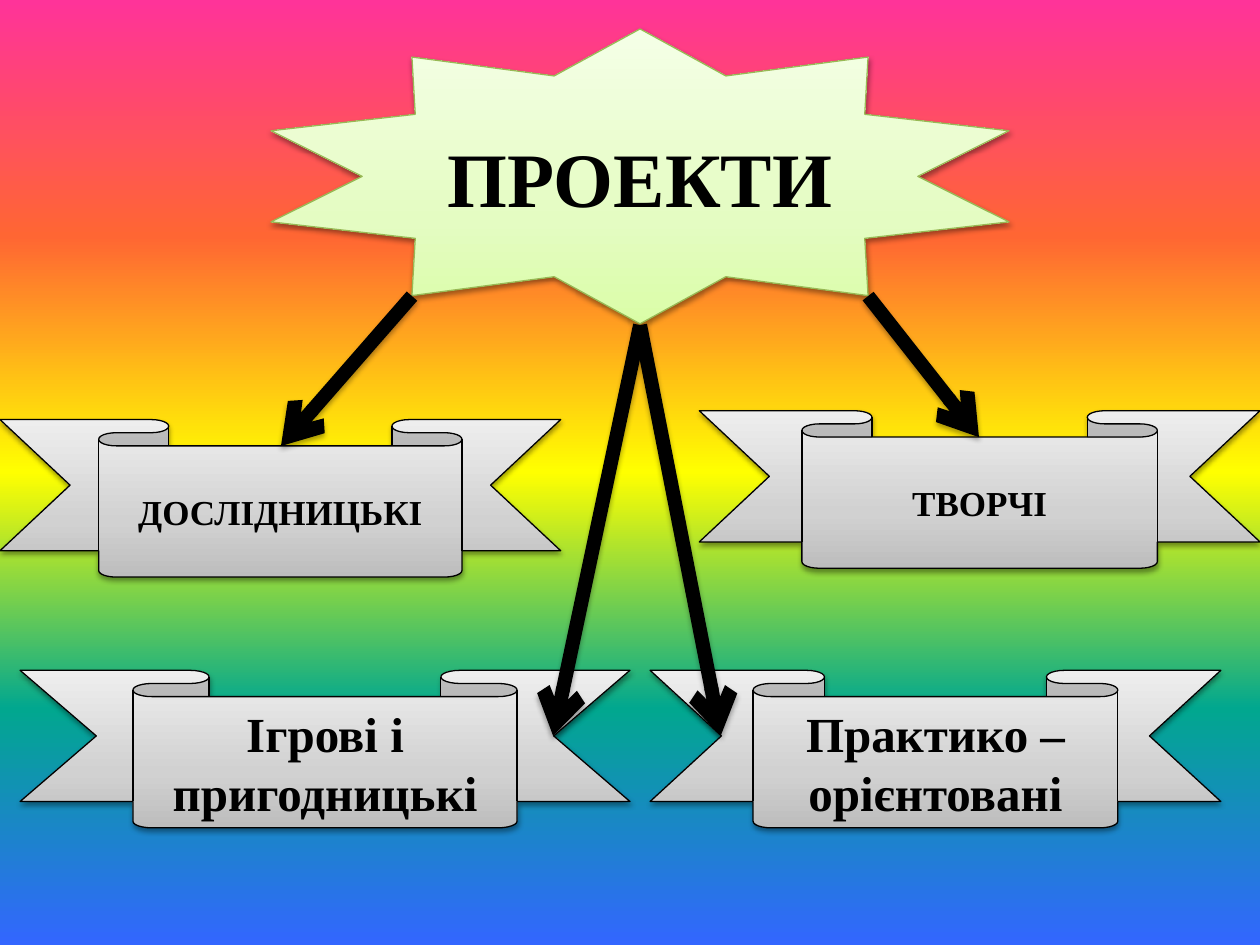
from dataclasses import dataclass

from lxml.etree import SubElement
from pptx import Presentation
from pptx.dml.color import RGBColor
from pptx.enum.shapes import MSO_CONNECTOR, MSO_SHAPE
from pptx.enum.text import MSO_ANCHOR, PP_ALIGN
from pptx.oxml.ns import qn
from pptx.util import Inches, Pt


@dataclass(frozen=True)
class Theme:
    font: str = "Times New Roman"
    ink: str = "000000"
    star_line: str = "98B955"
    rainbow: tuple = ((0, "FF3399"), (25, "FF6633"), (50, "FFFF00"),
                      (75, "01A78F"), (100, "3366FF"))
    star_fill: tuple = ((0, "DAFDA7"), (35, "E4FCC2"), (100, "F5FFE7"))
    ribbon_fill: tuple = ((0, "BDBDBD"), (35, "D1D1D1"), (100, "EEEEEE"))
    title_size: int = 44
    small_size: int = 20
    large_size: int = 28
    outline: float = 0.75
    arrow_width: int = 8


THEME = Theme()
RIBBON_HEIGHT = 1.25
RIBBON_FOLD = 0.167

# Ribbons: text, left, top, width, share of the width for the panel, text size
RIBBONS = (
    ("ДОСЛІДНИЦЬКІ", 0, 3.33, 4.45, 0.648, THEME.small_size),
    ("ТВОРЧІ", 5.55, 3.26, 4.45, 0.634, THEME.small_size),
    ("Ігрові і пригодницькі", 0.16, 5.32, 4.84, 0.63, THEME.large_size),
    ("Практико – орієнтовані", 5.16, 5.32, 4.53, 0.639, THEME.large_size),
)

# Arrows from the star's points to the ribbons
STAR_TIP = (5.08, 2.58)
ARROWS = (
    ((3.27, 2.35), (2.23, 3.54)),
    (STAR_TIP, (4.39, 5.84)),
    (STAR_TIP, (5.72, 5.84)),
    ((6.89, 2.35), (7.77, 3.47)),
)


def set_gradient(fill, element, stops, angle):
    """Fill with any number of stops; the angle runs counter-clockwise."""
    fill.gradient()
    fill.gradient_angle = angle
    stop_list = element.find(".//" + qn("a:gsLst"))
    for old_stop in list(stop_list):
        stop_list.remove(old_stop)
    for position, color in stops:
        stop = SubElement(stop_list, qn("a:gs"), pos=str(position * 1000))
        SubElement(stop, qn("a:srgbClr"), val=color)


def set_line(line, color, width):
    line.color.rgb = RGBColor.from_string(color)
    line.width = Pt(width)


def add_shadow(properties, distance, opacity):
    """Soft shadow that falls straight down."""
    effects = properties.find(qn("a:effectLst"))
    if effects is None:
        effects = SubElement(properties, qn("a:effectLst"))
    shadow = SubElement(effects, qn("a:outerShdw"), blurRad=str(Pt(3.1)),
                        dist=str(Pt(distance)), dir="5400000", rotWithShape="0")
    color = SubElement(shadow, qn("a:srgbClr"), val=THEME.ink)
    SubElement(color, qn("a:alpha"), val=str(opacity * 1000))


def add_label(shape, text, size):
    frame = shape.text_frame
    frame.word_wrap = True
    frame.vertical_anchor = MSO_ANCHOR.MIDDLE
    paragraph = frame.paragraphs[0]
    paragraph.alignment = PP_ALIGN.CENTER
    run = paragraph.add_run()
    run.text = text
    run.font.name = THEME.font
    run.font.size = Pt(size)
    run.font.bold = True
    run.font.color.rgb = RGBColor.from_string(THEME.ink)


def add_figure(slide, kind, box, adjustments, stops, line_color, text, size):
    shape = slide.shapes.add_shape(kind, *(Inches(value) for value in box))
    for index, value in enumerate(adjustments):
        shape.adjustments[index] = value
    set_gradient(shape.fill, shape.element.spPr, stops, 90)
    set_line(shape.line, line_color, THEME.outline)
    shape.shadow.inherit = False
    add_shadow(shape.element.spPr, 1.6, 38)
    add_label(shape, text, size)


def add_arrow(slide, start, end):
    connector = slide.shapes.add_connector(
        MSO_CONNECTOR.STRAIGHT, *(Inches(value) for value in start + end))
    set_line(connector.line, THEME.ink, THEME.arrow_width)
    properties = connector.element.spPr
    SubElement(properties.find(qn("a:ln")), qn("a:tailEnd"), type="arrow")
    add_shadow(properties, 1.8, 35)


def main():
    presentation = Presentation()
    presentation.slide_width = Inches(10)
    presentation.slide_height = Inches(7.5)
    slide = presentation.slides.add_slide(presentation.slide_layouts[6])

    # Rainbow background
    set_gradient(slide.background.fill, slide.element, THEME.rainbow, 270)

    # Central topic
    add_figure(slide, MSO_SHAPE.STAR_10_POINT, (2.15, 0.23, 5.86, 2.34),
               (0.358, 1.051), THEME.star_fill, THEME.star_line,
               "ПРОЕКТИ", THEME.title_size)

    # Kinds of project
    for text, left, top, width, panel, size in RIBBONS:
        add_figure(slide, MSO_SHAPE.DOWN_RIBBON, (left, top, width, RIBBON_HEIGHT),
                   (RIBBON_FOLD, panel), THEME.ribbon_fill, THEME.ink, text, size)

    # Arrows on top
    for start, end in ARROWS:
        add_arrow(slide, start, end)

    presentation.save("out.pptx")


if __name__ == "__main__":
    main()
